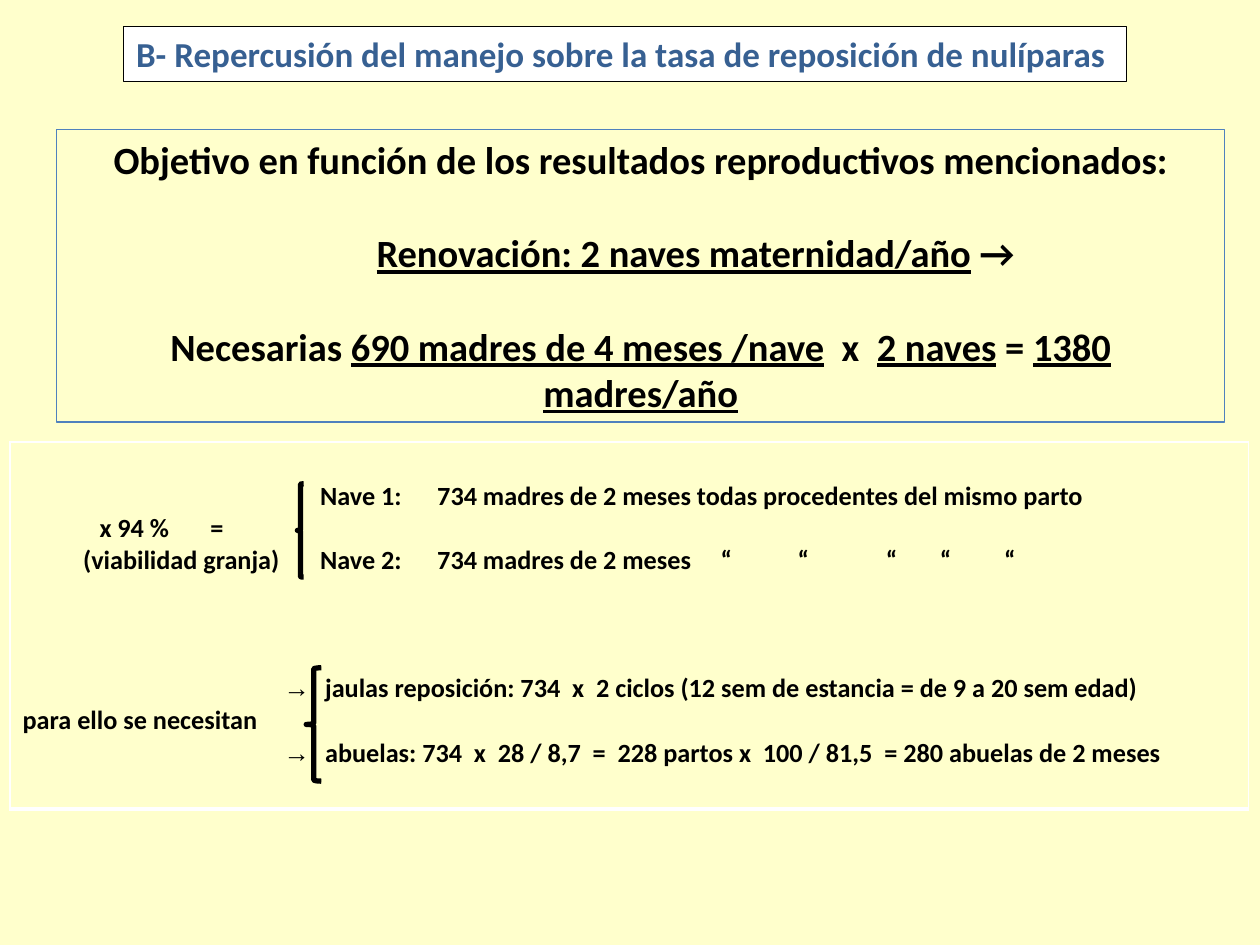
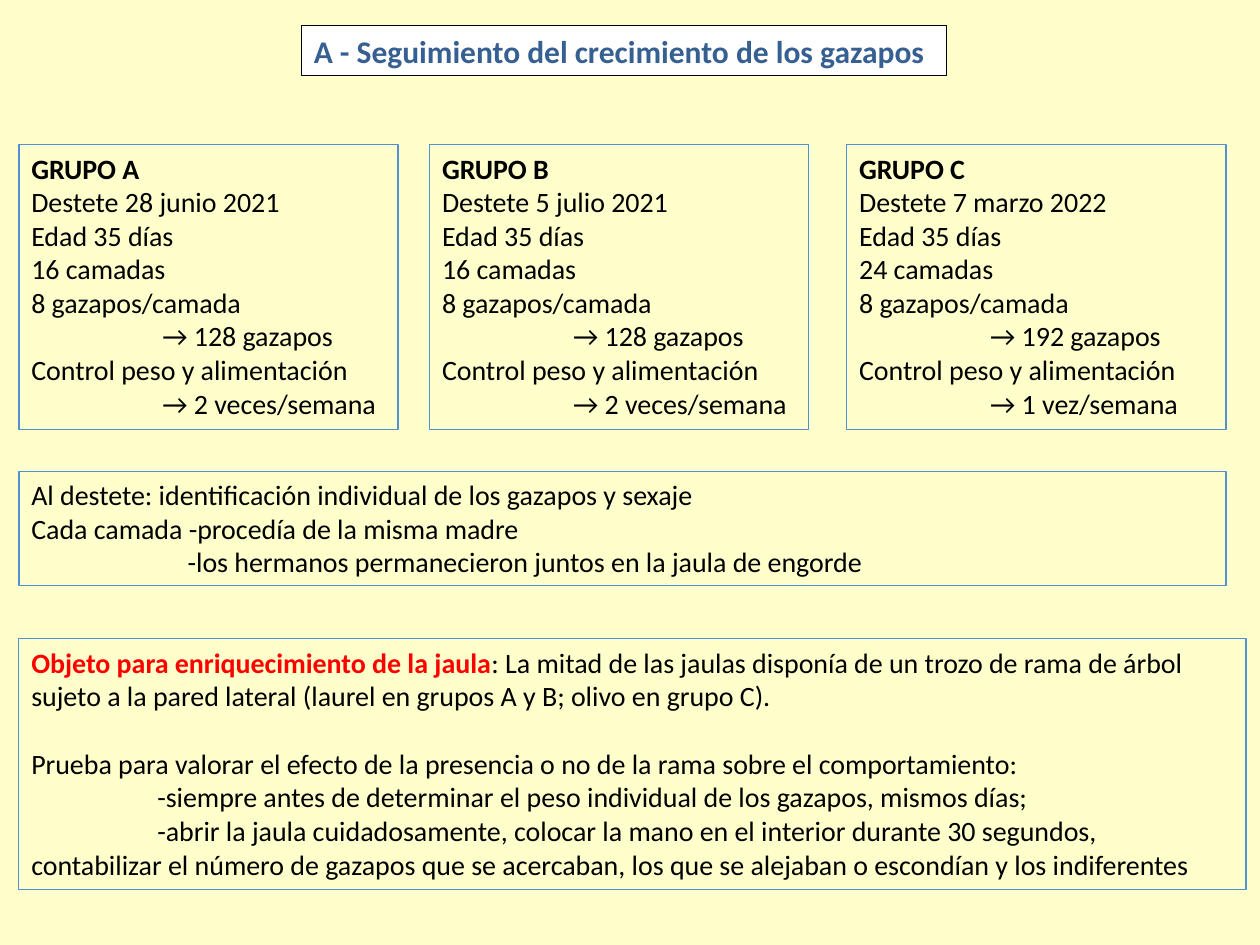
from lxml.etree import SubElement
from pptx import Presentation
from pptx.dml.color import RGBColor
from pptx.enum.shapes import MSO_SHAPE as SHAPE
from pptx.enum.text import MSO_ANCHOR as ANCHOR, MSO_AUTO_SIZE as FIT, PP_ALIGN as ALIGN
from pptx.oxml.ns import qn
from pptx.util import Inches, Pt

# The grid has 100 columns and 75 rows of 0.1 inch.
CELL = 0.1
COLORS = {"page": "FFFFCC", "white": "FFFFFF", "black": "000000", "title": "376092",
          "edge": "4F81BD", "frame": "558ED5", "red": "FF0000"}
FONT = "Calibri"
UNDER = {"underline": True}
ARROW = {"name": "Times New Roman"}
NAVE = [2.36, 3.29]
NEED = [2.07, 2.4]


def grid(*units):
    return [Inches(CELL * unit) for unit in units]


def color(name):
    return RGBColor.from_string(COLORS[name])


def outline(shape, name, width=0.75):
    shape.line.color.rgb = color(name)
    shape.line.width = Pt(width)


def write(para, parts, size, bold=False, ink="black", align=ALIGN.LEFT,
          first=0, before=0, tabs=()):
    """Fill a paragraph; a part is a text or a (text, font settings) pair."""
    para.alignment = align
    para.space_before = Pt(before)
    props = para._p.get_or_add_pPr()
    if first:
        props.set("marL", "0")
        props.set("indent", str(Inches(first)))
    if tabs:
        stops = SubElement(props, qn("a:tabLst"))
        for stop in tabs:
            SubElement(stops, qn("a:tab"), pos=str(Inches(stop)), algn="l")
    font = para.font
    font.name, font.size, font.bold = FONT, Pt(size), bold
    font.color.rgb = color(ink)
    for part in [parts] if isinstance(parts, str) else parts:
        text, style = (part, {}) if isinstance(part, str) else part
        run = para.add_run()
        run.text = text
        for key, value in style.items():
            if key == "ink":
                run.font.color.rgb = color(value)
            else:
                setattr(run.font, key, value)


def fill_text(frame, lines, **base):
    """Write lines, each a content or a (content, paragraph settings) pair."""
    for i, (parts, extra) in enumerate(lines):
        para = frame.add_paragraph() if i else frame.paragraphs[0]
        write(para, parts, **{**base, **extra})


def add_page(deck, text, place, size):
    page = deck.slides.add_slide(deck.slide_layouts[5])
    title = page.shapes.title
    title.left, title.top, title.width, title.height = grid(*place)
    title.fill.solid()
    title.fill.fore_color.rgb = color("white")
    outline(title, "black")
    frame = title.text_frame
    frame.auto_size = FIT.NONE
    frame.vertical_anchor = ANCHOR.TOP
    write(frame.paragraphs[0], text, size, True, "title")
    return page


def add_box(page, place, lines, edge="frame", **base):
    box = page.shapes.add_textbox(*grid(*place))
    box.text_frame.word_wrap = True
    outline(box, edge)
    fill_text(box.text_frame, lines, **{"size": 16, **base})


def add_brace(page, *place):
    brace = page.shapes.add_shape(SHAPE.LEFT_BRACE, *grid(*place))
    brace.shadow.inherit = False
    brace.fill.background()
    outline(brace, "black", 3)


def add_panel(page, place, lines):
    """Add a one-cell table with white borders."""
    table = page.shapes.add_table(1, 1, *grid(*place)).table
    table.first_row = table.horz_banding = False
    cell = table.cell(0, 0)
    cell.margin_top = Inches(0.3)
    props = cell._tc.get_or_add_tcPr()
    for side, width in zip("LRTB", (1, 1, 1, 3)):
        line = SubElement(props, qn(f"a:ln{side}"), w=str(Pt(width)))
        SubElement(SubElement(line, qn("a:solidFill")), qn("a:srgbClr"), val=COLORS["white"])
    cell.fill.background()
    fill_text(cell.text_frame, lines, size=15, bold=True)


def add_group(page, col, name, date, litters, total, often):
    lines = [(f"GRUPO {name}", {"bold": True}), (f"Destete {date}", {}),
             ("Edad 35 días", {}), (f"{litters} camadas", {}), ("8 gazapos/camada", {}),
             (f"→ {total} gazapos", {"first": 1.04}),
             ("Control peso y alimentación", {}),
             (f"→ {often}/semana", {"first": 1.04})]
    add_box(page, (col, 11.5, 30.1, 22.6), lines)


def restock_page(deck):
    page = add_page(deck, "B- Repercusión del manejo sobre la tasa de reposición de nulíparas",
                    (9.8, 2.1, 79.6, 4.4), 20)
    add_box(page, (4.5, 10.3, 92.7, 23.2), [
        ("Objetivo en función de los resultados reproductivos mencionados:", {}),
        ([("Renovación: 2 naves maternidad/año", UNDER), " →"], {"first": 0.87, "before": 27}),
        (["Necesarias ", ("690 madres de 4 meses /nave", UNDER), "  x  ", ("2 naves", UNDER),
          " = ", ("1380 madres/año", UNDER)], {"before": 27}),
    ], edge="edge", size=22, bold=True, align=ALIGN.CENTER)
    add_panel(page, (0.8, 35.1, 98.3, 29.1), [
        ("\tNave 1:\t734 madres de 2 meses todas procedentes del mismo parto", {"tabs": NAVE}),
        ("\tx 94 %\t=", {"tabs": [0.61, 1.49]}),
        ("\t(viabilidad granja)\tNave 2:\t734 madres de 2 meses\t“\t“\t“\t“\t“",
         {"tabs": [0.48, *NAVE, 5.54, 6.15, 6.85, 7.28, 7.79]}),
        (["\t", ("→", ARROW),
          "\tjaulas reposición: 734  x  2 ciclos (12 sem de estancia = de 9 a 20 sem edad)"],
         {"tabs": NEED, "before": 55}),
        ("para ello se necesitan", {}),
        (["\t", ("→", ARROW),
          "\tabuelas: 734  x  28 / 8,7  =  228 partos x  100 / 81,5  = 280 abuelas de 2 meses"],
         {"tabs": NEED}),
    ])
    add_brace(page, 24.3, 53, 1.2, 9)
    add_brace(page, 23.6, 38.4, 0.5, 7.4)


def growth_page(deck):
    page = add_page(deck, "A - Seguimiento del crecimiento de los gazapos",
                    (23.9, 2, 51.2, 4), 18)
    add_group(page, 1.5, "A", "28 junio 2021", 16, 128, "2 veces")
    add_group(page, 34.1, "B", "5 julio 2021", 16, 128, "2 veces")
    add_group(page, 67.2, "C", "7 marzo 2022", 24, 192, "1 vez")
    add_box(page, (1.5, 37.4, 95.8, 9.1), [
        ("Al destete: identificación individual de los gazapos y sexaje", {}),
        ("Cada camada -procedía de la misma madre", {}),
        ("-los hermanos permanecieron juntos en la jaula de engorde", {"first": 1.24}),
    ])
    add_box(page, (1.5, 50.7, 97.4, 19.9), [
        ([("Objeto para enriquecimiento de la jaula", {"bold": True, "ink": "red"}),
          ": La mitad de las jaulas disponía de un trozo de rama de árbol sujeto a la pared "
          "lateral (laurel en grupos A y B; olivo en grupo C)."], {}),
        ("Prueba para valorar el efecto de la presencia o no de la rama sobre el "
         "comportamiento:", {"before": 19.5}),
        ("-siempre antes de determinar el peso individual de los gazapos, mismos días;",
         {"first": 1}),
        ("-abrir la jaula cuidadosamente, colocar la mano en el interior durante 30 segundos, "
         "contabilizar el número de gazapos que se acercaban, los que se alejaban o escondían "
         "y los indiferentes", {"first": 1}),
    ])


def main():
    deck = Presentation()
    deck.slide_width, deck.slide_height = grid(100, 75)
    back = deck.slide_master.background.fill
    back.solid()
    back.fore_color.rgb = color("page")
    restock_page(deck)
    growth_page(deck)
    deck.save("out.pptx")


if __name__ == "__main__":
    main()
